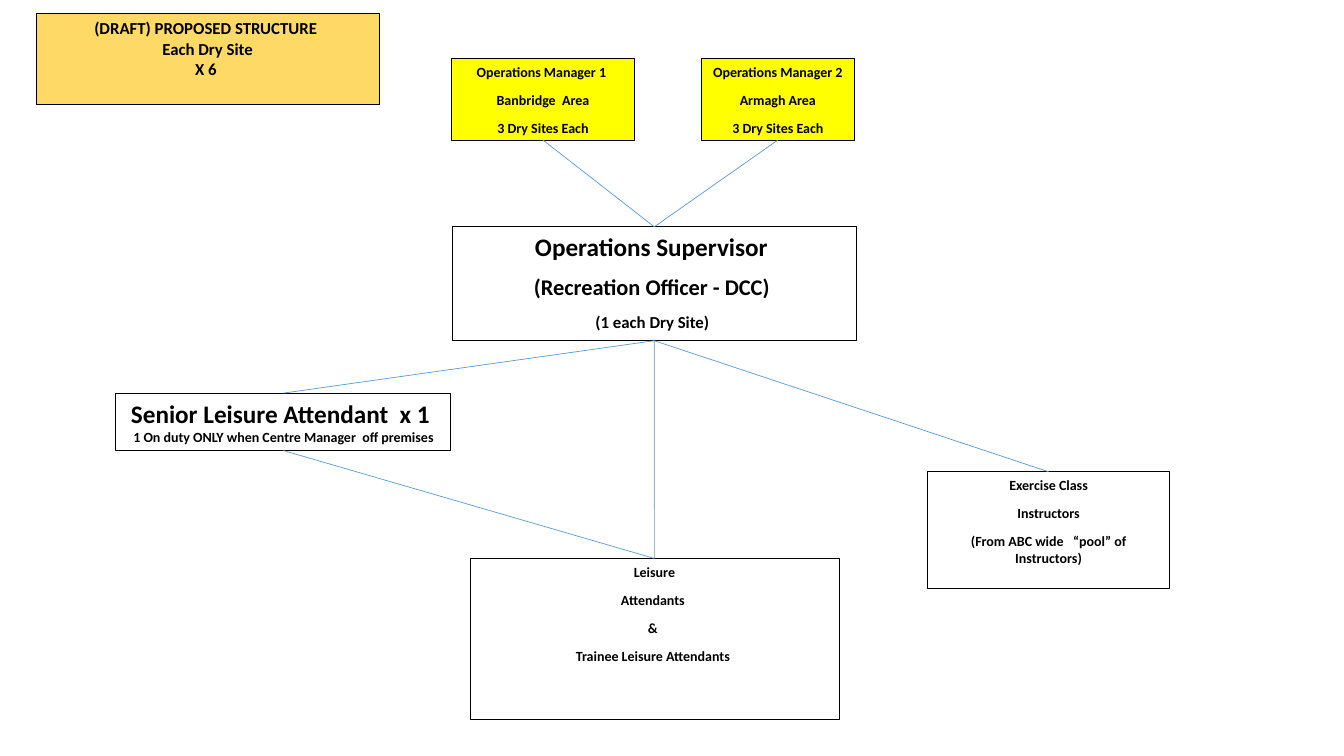
import pptx
import pptx.dml.color
import pptx.enum.shapes
import pptx.enum.text
import pptx.oxml.ns
import pptx.util
import lxml.etree

COLOURS = {
    "heading": "FFD966",
    "manager": "FFFF00",
    "role": "FFFFFF",
    "ink": "000000",
    "link": "5B9BD5",
}
FONT = "Calibri"
WIDTH, HEIGHT = pptx.util.Inches(13.33), pptx.util.Inches(7.5)
COLUMN, ROW = WIDTH / 100, HEIGHT / 100  # the slide is a grid of 100 by 100
TOP, BOTTOM = 0, 2  # connection sites of a rectangle


def colour(name):
    return pptx.dml.color.RGBColor.from_string(COLOURS[name])


def grid(box):
    left, top, width, height = box
    return [round(length) for length in
            (left * COLUMN, top * ROW, width * COLUMN, height * ROW)]


def within(region, part):
    """Move a part, given from the region's corner, onto the slide's grid."""
    return region[0] + part[0], region[1] + part[1], part[2], part[3]


def style_box(shape, fill, lines, line_width, space_after):
    """Fill and outline a box, then write its (text, size) lines."""
    shape.fill.solid()
    shape.fill.fore_color.rgb = colour(fill)
    shape.line.color.rgb = colour("ink")
    shape.line.width = pptx.util.Pt(line_width)
    frame = shape.text_frame
    frame.word_wrap = True
    frame.auto_size = pptx.enum.text.MSO_AUTO_SIZE.NONE
    frame.vertical_anchor = pptx.enum.text.MSO_ANCHOR.TOP
    frame.text = "\n".join(text for text, size in lines)
    for paragraph, (text, size) in zip(frame.paragraphs, lines):
        paragraph.alignment = pptx.enum.text.PP_ALIGN.CENTER
        paragraph.space_after = pptx.util.Pt(space_after)
        font = paragraph.runs[0].font
        font.name, font.size, font.bold = FONT, pptx.util.Pt(size), True
        font.color.rgb = colour("ink")


def add_role(slide, box, lines, fill="role", line_width=0.5, space_after=8):
    shape = slide.shapes.add_shape(
        pptx.enum.shapes.MSO_SHAPE.RECTANGLE, *grid(box))
    shape.shadow.inherit = False
    style_box(shape, fill, lines, line_width, space_after)
    return shape


def add_link(slide, upper, lower):
    """Join the bottom of one box to the top of another."""
    link = slide.shapes.add_connector(
        pptx.enum.shapes.MSO_CONNECTOR.STRAIGHT, 0, 0, 0, 0)
    link.begin_connect(upper, BOTTOM)
    link.end_connect(lower, TOP)
    link.line.color.rgb = colour("link")
    link.line.width = pptx.util.Pt(0.5)
    lxml.etree.SubElement(link._element.spPr, pptx.oxml.ns.qn("a:effectLst"))


def add_heading(slide, region):
    title = slide.shapes.title
    title.left, title.top, title.width, title.height = grid(region)
    lines = ["(DRAFT) PROPOSED STRUCTURE ", "Each Dry Site", "X 6 "]
    style_box(title, "heading", [(text, 12) for text in lines], 0.75, 0)


def add_managers(slide, region):
    managers = [
        (0, 13.58, "Operations Manager 1 ", "Banbridge  Area"),
        (18.6, 11.33, "Operations Manager 2", "Armagh Area"),
    ]
    return [
        add_role(slide, within(region, (left, 0, width, region[3])),
                 [(text, 10) for text in (name, area, "3 Dry Sites Each")],
                 "manager")
        for left, width, name, area in managers
    ]


def add_supervisor(slide, region):
    return add_role(slide, region, [
        ("Operations Supervisor ", 18),
        ("(Recreation Officer - DCC) ", 16),
        ("(1 each Dry Site)\u00a0", 12),
    ])


def add_staff(slide, region):
    senior = add_role(
        slide, within(region, (0, 0, 24.91, 7.6)),
        [("Senior Leisure Attendant  x 1 ", 18),
         ("1 On duty ONLY when Centre Manager  off premises", 10)],
        line_width=0.75, space_after=0)
    instructors = add_role(
        slide, within(region, (60.39, 10.4, 18, 15.47)),
        [(text, 10) for text in (
            "Exercise Class", "Instructors",
            "(From ABC wide   “pool” of Instructors)")])
    attendants = add_role(
        slide, within(region, (26.33, 21.87, 27.46, 21.33)),
        [(text, 10) for text in (
            "Leisure", "Attendants ", "& ", "Trainee Leisure Attendants ")])
    return senior, instructors, attendants


def add_structure(presentation):
    slide = presentation.slides.add_slide(presentation.slide_layouts[5])
    add_heading(slide, (2.7, 1.73, 25.51, 12.13))
    managers = add_managers(slide, (33.61, 7.73, 29.93, 10.8))
    supervisor = add_supervisor(slide, (33.68, 30, 30.01, 15.07))
    staff = add_staff(slide, (8.63, 52, 78.39, 43.2))

    # Reporting lines
    for manager in managers:
        add_link(slide, manager, supervisor)
    for member in staff:
        add_link(slide, supervisor, member)
    senior, instructors, attendants = staff
    add_link(slide, senior, attendants)


def main():
    presentation = pptx.Presentation()
    presentation.slide_width, presentation.slide_height = WIDTH, HEIGHT
    add_structure(presentation)
    presentation.save("out.pptx")


if __name__ == "__main__":
    main()
